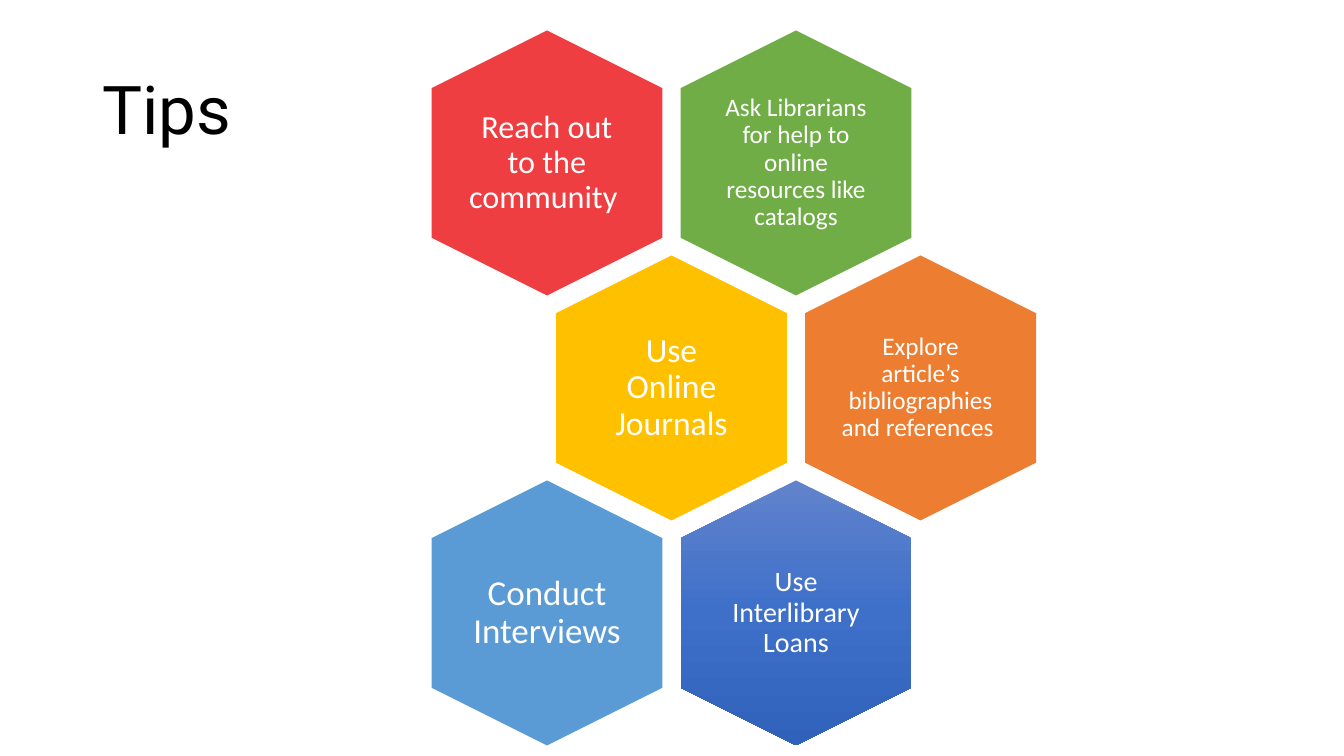
import copy

import pptx
import pptx.dml.color
import pptx.enum.shapes
import pptx.enum.text
import pptx.util

# Content: row, column, text, size in pt, inset in px, fill
TITLE = "Tips"
TIPS = [
    (0, 1, "Ask Librarians for help to online resources like catalogs", 18, 7, "green"),
    (0, 0, "Reach out to the community ", 23, 0, "red"),
    (1, 0, "Use Online Journals", 24, 10, "gold"),
    (1, 1, "Explore article’s bibliographies and references ", 18, 0, "orange"),
    (2, 1, "Use Interlibrary Loans", 20, 8, None),
    (2, 0, "Conduct Interviews", 25, 0, "blue"),
]
COLORS = {
    "green": "70AD47", "red": "EF3E42", "gold": "FFC000", "orange": "ED7D31",
    "blue": "5B9BD5", "white": "FFFFFF", "black": "000000",
    "light": "6183CB", "mid": "3E70CA", "dark": "3062BB",
}
FADE = ["light", "mid", "dark"]

# Honeycomb layout in px: centre of the first cell, steps, sizes
LEFT, TOP = 547, 163
STEP_X, STEP_Y = 249, 225
HEX_W, HEX_H = 265, 231
TEXT_W, TEXT_H = 159, 182
SCALE = 914400 / 100.8


def px(n):
    return pptx.util.Emu(round(n * SCALE))


def rgb(name):
    return pptx.dml.color.RGBColor.from_string(COLORS[name])


def box(x, y, w, h):
    return px(x - w / 2), px(y - h / 2), px(w), px(h)


def write(frame, text, size, font, color):
    frame.word_wrap = True
    frame.vertical_anchor = pptx.enum.text.MSO_ANCHOR.MIDDLE
    para = frame.paragraphs[0]
    para.line_spacing = 0.9
    run = para.add_run()
    run.text = text
    run.font.size = pptx.util.Pt(size)
    run.font.name = font
    run.font.color.rgb = rgb(color)
    return para


def fade(fill):
    """Vertical three-stop gradient that stays upright on a turned shape."""
    fill.gradient()
    stops = fill._fill._gradFill.gsLst
    stops.insert(1, copy.deepcopy(stops[0]))
    for i, (stop, name) in enumerate(zip(fill.gradient_stops, FADE)):
        stop.position = i / 2
        stop.color.rgb = rgb(name)
    fill.gradient_angle = 270
    fill._fill._gradFill.set("rotWithShape", "0")


def add_tip(slide, row, col, text, size, inset, color):
    x = LEFT + STEP_X * (col + row % 2 / 2)
    y = TOP + STEP_Y * row

    # Hexagon standing on its point
    cell = slide.shapes.add_shape(
        pptx.enum.shapes.MSO_SHAPE.HEXAGON, *box(x, y, HEX_W, HEX_H))
    cell.rotation = 90
    cell.adjustments[0] = 0.25
    cell.shadow.inherit = False
    cell.line.fill.background()
    if color:
        cell.fill.solid()
        cell.fill.fore_color.rgb = rgb(color)
    else:
        fade(cell.fill)

    # Upright label
    frame = slide.shapes.add_textbox(*box(x, y, TEXT_W, TEXT_H)).text_frame
    frame.margin_left = frame.margin_right = px(inset)
    frame.margin_top = frame.margin_bottom = px(inset)
    para = write(frame, text, size, "Calibri", "white")
    para.alignment = pptx.enum.text.PP_ALIGN.CENTER


def main():
    deck = pptx.Presentation()
    deck.slide_width, deck.slide_height = px(1344), px(756)
    slide = deck.slides.add_slide(deck.slide_layouts[5])

    # Title
    head = slide.shapes.title
    head.left, head.top, head.width, head.height = px(92), px(40), px(1159), px(146)
    para = write(head.text_frame, TITLE, 48, "Roboto", "black")
    para.alignment = pptx.enum.text.PP_ALIGN.LEFT

    # Tips
    for tip in TIPS:
        add_tip(slide, *tip)

    deck.save("out.pptx")


if __name__ == "__main__":
    main()
